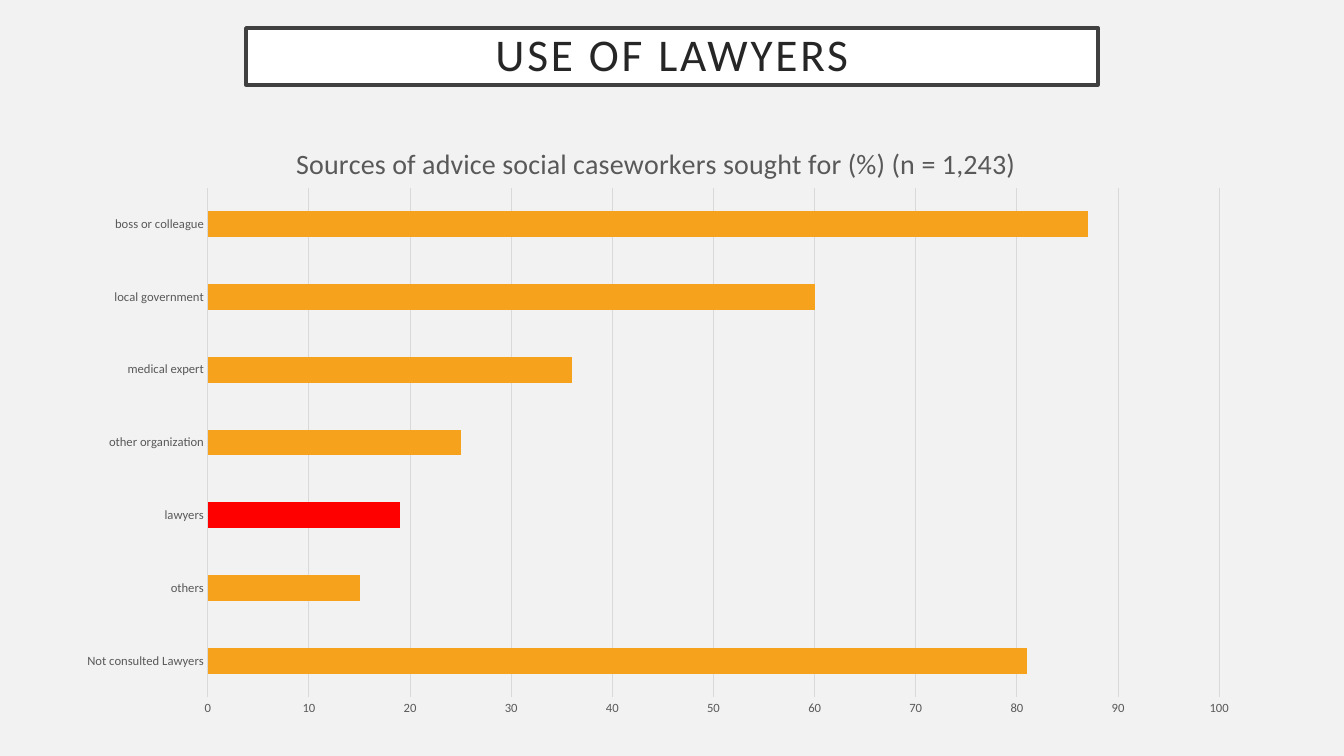
from pptx import Presentation
from pptx.chart.data import CategoryChartData
from pptx.dml.color import RGBColor
from pptx.enum.chart import XL_CHART_TYPE as ChartType, XL_TICK_MARK as TickMark
from pptx.enum.shapes import MSO_SHAPE as Shape
from pptx.enum.text import MSO_ANCHOR as Anchor, PP_ALIGN as Align
from pptx.oxml import parse_xml
from pptx.oxml.ns import nsdecls
from pptx.util import Emu, Pt

PX = 914400 / 100.8
FONT = "Calibri"
BACKGROUND, WHITE, FRAME, HEADING = "F2F2F2", "FFFFFF", "404040", "262626"
LABEL, GRID, BAR, HIGHLIGHT = "595959", "D9D9D9", "F6A21D", "FF0000"

ADVICE_SOURCES = {
    "Not consulted Lawyers": 81,
    "others": 15,
    "lawyers": 19,
    "other organization": 25,
    "medical expert": 36,
    "local government": 60,
    "boss or colleague": 87,
}


def px(*lengths):
    return [Emu(round(length * PX)) for length in lengths]


def color(hex_string):
    return RGBColor.from_string(hex_string)


def apply(target, values):
    for name, value in values.items():
        setattr(target, name, value)


def paint(fill, hex_string):
    fill.solid()
    fill.fore_color.rgb = color(hex_string)


def set_font(font, size, hex_string):
    apply(font, {"name": FONT, "size": Pt(size), "bold": False})
    font.color.rgb = color(hex_string)


def set_line(line, width, hex_string):
    line.width = Pt(width)
    line.color.rgb = color(hex_string)


def place(parent, index, **fractions):
    """Give a chart part a fixed place, in fractions of the chart area."""
    for old_layout in parent.xpath("./c:layout"):
        parent.remove(old_layout)
    target = '<c:layoutTarget val="inner"/>' if "w" in fractions else ""
    modes = "".join(f'<c:{key}Mode val="edge"/>' for key in "xy")
    sizes = "".join(f'<c:{key} val="{value}"/>' for key, value in fractions.items())
    parent.insert(index, parse_xml(
        f'<c:layout {nsdecls("c")}><c:manualLayout>{target}{modes}{sizes}'
        "</c:manualLayout></c:layout>"))


class SlideBuilder:
    def __init__(self, deck):
        self.slide = deck.slides.add_slide(deck.slide_layouts[6])
        paint(self.slide.background.fill, BACKGROUND)

    def heading(self, text, left, top, width, height):
        box = self.slide.shapes.add_shape(
            Shape.RECTANGLE, *px(left, top, width, height))
        box.shadow.inherit = False
        paint(box.fill, WHITE)
        set_line(box.line, 2.5, FRAME)
        apply(box.text_frame, {
            "word_wrap": True, "vertical_anchor": Anchor.MIDDLE,
            "margin_top": 0, "margin_bottom": 0})
        para = box.text_frame.paragraphs[0]
        apply(para, {"alignment": Align.CENTER, "line_spacing": 0.9})
        span = para.add_run()
        span.text = text
        set_font(span.font, 32.4, HEADING)
        span.font._element.set("spc", "200")

    def bar_chart(self, title, values, highlighted, left, top, width, height):
        data = CategoryChartData()
        data.categories = list(values)
        data.add_series("Series 1", list(values.values()))
        chart = self.slide.shapes.add_chart(
            ChartType.BAR_CLUSTERED, *px(left, top, width, height), data).chart
        chart.has_legend = False
        set_font(chart.font, 10, "000000")
        self.chart_title(chart, title)
        place(chart.element.xpath(".//c:plotArea")[0], 0, x=0.12, y=0.12, w=0.85, h=0.83)
        self.axes(chart)

        plot = chart.plots[0]
        apply(plot, {"gap_width": 182, "vary_by_categories": False})
        series = plot.series[0]
        series.invert_if_negative = False
        paint(series.format.fill, BAR)
        point = series.points[list(values).index(highlighted)]
        paint(point.format.fill, HIGHLIGHT)

    def chart_title(self, chart, text):
        chart.has_title = True
        span = chart.chart_title.text_frame.paragraphs[0].add_run()
        span.text = text
        set_font(span.font, 20, LABEL)
        place(chart.element.xpath(".//c:title")[0], 1, x=0.19, y=0.04)

    def axes(self, chart):
        category_axis, value_axis = chart.category_axis, chart.value_axis
        for axis in (category_axis, value_axis):
            apply(axis, {"major_tick_mark": TickMark.NONE,
                         "minor_tick_mark": TickMark.NONE})
            set_font(axis.tick_labels.font, 9, LABEL)
        set_line(category_axis.format.line, 0.75, GRID)
        apply(value_axis, {"minimum_scale": 0, "maximum_scale": 100,
                           "major_unit": 10, "has_major_gridlines": True})
        value_axis.format.line.fill.background()
        set_line(value_axis.major_gridlines.format.line, 0.75, GRID)


def main():
    deck = Presentation()
    deck.slide_width, deck.slide_height = px(1344, 756)
    builder = SlideBuilder(deck)
    builder.heading("USE OF LAWYERS", 246, 28, 852, 57)
    builder.bar_chart(
        "Sources of advice social caseworkers sought for (%) (n = 1,243)",
        ADVICE_SOURCES, "lawyers", 65, 114, 1190, 614)
    deck.save("out.pptx")


if __name__ == "__main__":
    main()
